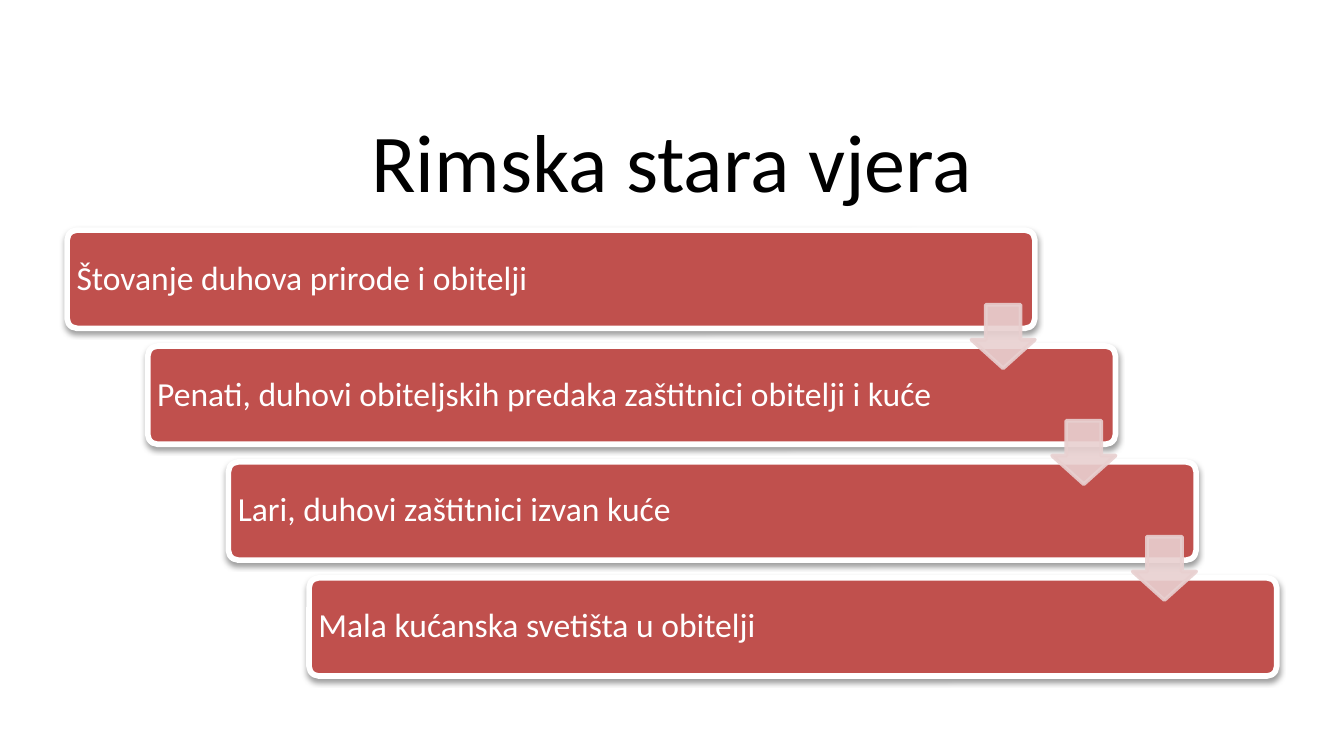
from lxml import etree
from pptx import Presentation
from pptx.dml.color import RGBColor
from pptx.enum import shapes, text
from pptx.oxml import ns
from pptx.util import Pt

RED, PINK, WHITE, BLACK = "C0504D", "E8D0D0", "FFFFFF", "000000"
STEPS = [
    "Štovanje duhova prirode i obitelji",
    "Penati, duhovi obiteljskih predaka zaštitnici obitelji i kuće",
    "Lari, duhovi zaštitnici izvan kuće",
    "Mala kućanska svetišta u obitelji",
]
LEFT, TOP = 36, 123.3
WIDE, HIGH = 518.4, 52.6
STEP_X, STEP_Y = 43.2, 62.1
ARROW = 34


def rgb(color):
    return RGBColor.from_string(color)


def node(parent, tag, **attrs):
    return etree.SubElement(parent, ns.qn(tag), attrs)


def write(shape, words, size, color, align, inset):
    frame = shape.text_frame
    sides = dict.fromkeys(
        ("margin_left", "margin_right", "margin_top", "margin_bottom"), Pt(inset))
    look = {"word_wrap": True, "vertical_anchor": text.MSO_ANCHOR.MIDDLE, **sides}
    for key, value in look.items():
        setattr(frame, key, value)
    para = frame.paragraphs[0]
    para.alignment, para.line_spacing = align, 0.9
    run = para.add_run()
    run.text = words
    for key, value in {"name": "Calibri", "size": Pt(size)}.items():
        setattr(run.font, key, value)
    run.font.color.rgb = rgb(color)


def draw(slide, kind, box, adjust, fill, line, width):
    shape = slide.shapes.add_shape(kind, *map(Pt, box))
    for i, value in enumerate(adjust):
        shape.adjustments[i] = value
    shape.shadow.inherit = False
    shape.fill.solid()
    shape.fill.fore_color.rgb = rgb(fill)
    shape.line.color.rgb = rgb(line)
    shape.line.width = Pt(width)
    return shape


def shade(shape):
    """Add a soft shadow straight below the shape."""
    effects = shape._element.spPr.find(ns.qn("a:effectLst"))
    shadow = node(effects, "a:outerShdw", blurRad=str(Pt(3.1)), dist=str(Pt(1.6)),
                  dir="5400000", rotWithShape="0")
    color = node(shadow, "a:srgbClr", val=BLACK)
    node(color, "a:alpha", val="38000")


def fade(shape):
    """Make fill and line 90 % opaque."""
    for color in shape._element.spPr.iter(ns.qn("a:srgbClr")):
        node(color, "a:alpha", val="90000")


def add_title(slide, words):
    box = slide.shapes.add_textbox(*map(Pt, (36, 60.5, 648, 56.2)))
    write(box, words, 44, BLACK, text.PP_ALIGN.CENTER, 3.6)


def add_card(slide, i, words):
    box = LEFT + i * STEP_X, TOP + i * STEP_Y, WIDE, HIGH
    card = draw(slide, shapes.MSO_SHAPE.ROUNDED_RECTANGLE, box, [0.1], RED, WHITE, 3)
    shade(card)
    write(card, words, 18, WHITE, text.PP_ALIGN.LEFT, 3.5)


def add_arrow(slide, i):
    """Place an arrow over the gap below card i, flush with its right edge."""
    left = LEFT + i * STEP_X + WIDE - ARROW
    top = TOP + i * STEP_Y + 40
    arrow = draw(slide, shapes.MSO_SHAPE.DOWN_ARROW, (left, top, ARROW, ARROW),
                 [0.55, 0.45], PINK, PINK, 2)
    # The adjustments list holds the shaft width last in this order of the preset.
    arrow.adjustments[0], arrow.adjustments[1] = 0.55, 0.45
    fade(arrow)


def main():
    deck = Presentation()
    deck.slide_width, deck.slide_height = Pt(720), Pt(405)
    slide = deck.slides.add_slide(deck.slide_layouts[6])
    add_title(slide, "Rimska stara vjera")
    for i, words in enumerate(STEPS):
        add_card(slide, i, words)
    for i in range(len(STEPS) - 1):
        add_arrow(slide, i)
    deck.save("out.pptx")


if __name__ == "__main__":
    main()
